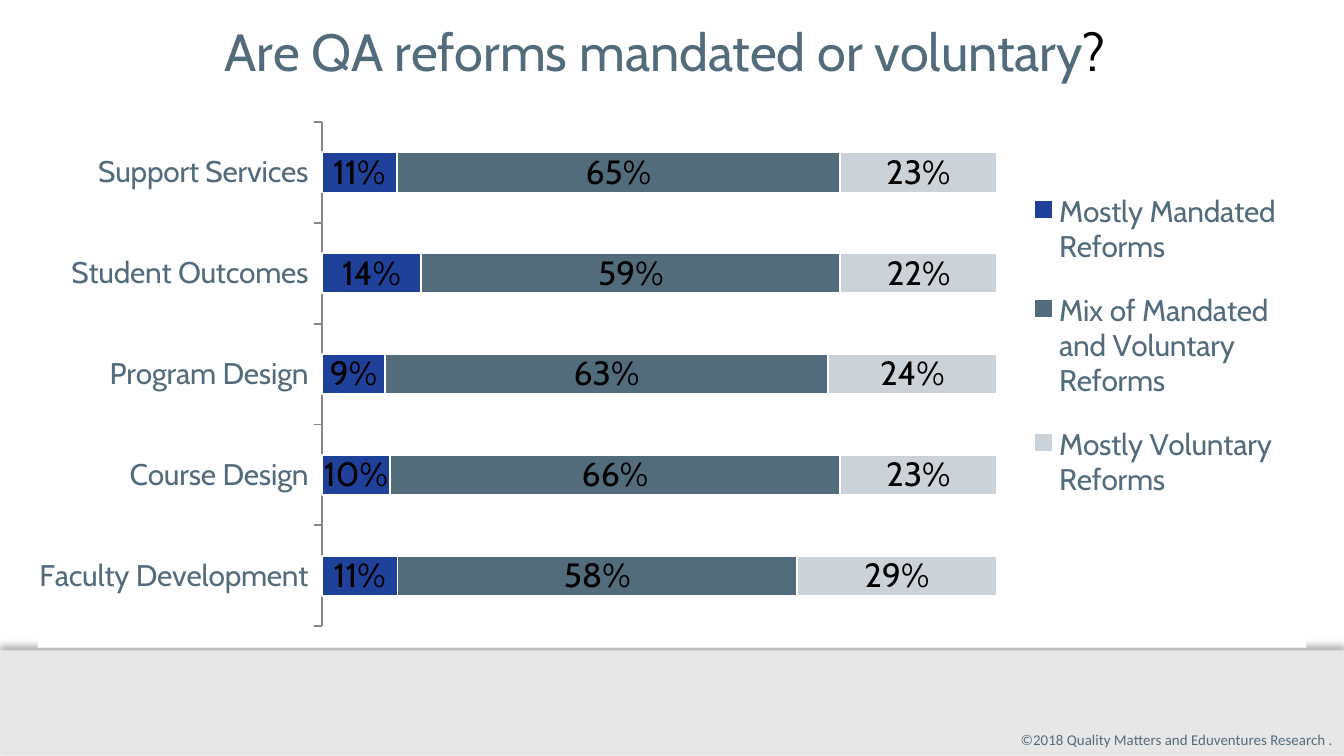
from lxml.etree import fromstring
from pptx import Presentation
from pptx.chart.data import CategoryChartData
from pptx.dml.color import RGBColor
from pptx.enum.chart import XL_CHART_TYPE, XL_LEGEND_POSITION, XL_TICK_LABEL_POSITION, XL_TICK_MARK
from pptx.enum.shapes import MSO_SHAPE
from pptx.enum.text import MSO_ANCHOR, PP_ALIGN
from pptx.oxml.ns import nsdecls, qn
from pptx.util import Inches, Pt

COLORS = {
    "slate": "526C7C",
    "blue": "1F419A",
    "mist": "CBD3D8",
    "band": "E7E7E7",
    "axis": "868686",
    "black": "000000",
    "white": "FFFFFF",
}
CATEGORIES = ["Faculty Development", "Course Design", "Program Design",
              "Student Outcomes", "Support Services"]
SERIES = [
    ("Mostly Mandated Reforms", "blue", [0.11, 0.10, 0.09, 0.14, 0.11]),
    ("Mix of Mandated and Voluntary Reforms", "slate", [0.58, 0.66, 0.63, 0.59, 0.65]),
    ("Mostly Voluntary Reforms", "mist", [0.29, 0.23, 0.24, 0.22, 0.23]),
]


def color(name):
    return RGBColor.from_string(COLORS[name])


def style_font(font, size, color_name, name="Cabin"):
    font.name = name
    font.size = Pt(size)
    font.color.rgb = color(color_name)
    font.bold = False


def add_run(paragraph, text, size, color_name, name="Cabin"):
    run = paragraph.add_run()
    run.text = text
    style_font(run.font, size, color_name, name)


def manual_layout(left, top, width, height, target=""):
    return fromstring(
        f'<c:layout {nsdecls("c")}><c:manualLayout>{target}'
        '<c:xMode val="edge"/><c:yMode val="edge"/>'
        f'<c:x val="{left}"/><c:y val="{top}"/><c:w val="{width}"/><c:h val="{height}"/>'
        '</c:manualLayout></c:layout>')


def add_footer(slide, left, top, width, height):
    band = slide.shapes.add_shape(MSO_SHAPE.RECTANGLE, Inches(left), Inches(top),
                                  Inches(width), Inches(height))
    band.fill.solid()
    band.fill.fore_color.rgb = color("band")
    band.line.fill.background()
    band.shadow.inherit = False
    effects = band._element.spPr.find(qn("a:effectLst"))
    effects.append(fromstring(
        f'<a:outerShdw {nsdecls("a")} blurRad="{Pt(4)}" dist="{Pt(3)}" dir="16200000" '
        f'rotWithShape="0"><a:srgbClr val="{COLORS["black"]}"><a:alpha val="30000"/>'
        '</a:srgbClr></a:outerShdw>'))

    box = slide.shapes.add_textbox(Inches(left + 6.75), Inches(top + 0.55),
                                   Inches(3.17), Inches(0.24))
    frame = box.text_frame
    frame.word_wrap = True
    frame.margin_right = 0
    paragraph = frame.paragraphs[0]
    paragraph.alignment = PP_ALIGN.RIGHT
    add_run(paragraph, "©2018 Quality Matters and Eduventures Research .", 8, "slate", "Calibri")


def add_title(slide, left, top, width, height):
    title = slide.shapes.title
    title.left, title.top = Inches(left), Inches(top)
    title.width, title.height = Inches(width), Inches(height)
    frame = title.text_frame
    frame.word_wrap = True
    frame.vertical_anchor = MSO_ANCHOR.TOP
    paragraph = frame.paragraphs[0]
    paragraph.alignment = PP_ALIGN.CENTER
    add_run(paragraph, "Are QA reforms mandated or voluntary", 28, "slate")
    add_run(paragraph, "?", 28, "black")


def add_reform_chart(slide, left, top, width, height):
    data = CategoryChartData(number_format="0%")
    data.categories = CATEGORIES
    for name, _, values in SERIES:
        data.add_series(name, values)
    chart = slide.shapes.add_chart(XL_CHART_TYPE.BAR_STACKED_100, Inches(left), Inches(top),
                                   Inches(width), Inches(height), data).chart
    chart.has_title = False
    style_font(chart.font, 18, "black")

    category_axis = chart.category_axis
    category_axis.major_tick_mark = XL_TICK_MARK.OUTSIDE
    category_axis.tick_label_position = XL_TICK_LABEL_POSITION.LOW
    category_axis.format.line.color.rgb = color("axis")
    category_axis.format.line.width = Pt(1)
    style_font(category_axis.tick_labels.font, 16, "slate")
    value_axis = chart.value_axis
    value_axis.visible = False
    value_axis.has_major_gridlines = False
    value_axis.minimum_scale, value_axis.maximum_scale = 0, 1

    plot = chart.plots[0]
    plot.gap_width, plot.overlap = 150, 100
    plot.vary_by_categories = False
    for series, (_, fill_name, _) in zip(plot.series, SERIES):
        series.format.fill.solid()
        series.format.fill.fore_color.rgb = color(fill_name)
        series.format.line.color.rgb = color("white")
        series.format.line.width = Pt(1)
        labels = series.data_labels
        labels.show_value = True
        labels.number_format = "0%"
        labels.number_format_is_linked = False
        style_font(labels.font, 18, "black")

    chart.has_legend = True
    legend = chart.legend
    legend.position = XL_LEGEND_POSITION.RIGHT
    legend.include_in_layout = False
    style_font(legend.font, 16, "slate")
    legend._element.find(qn("c:legendPos")).addnext(manual_layout(0.776, 0.12, 0.21, 0.66))

    plot_area = chart._chartSpace.chart.plotArea
    for layout in plot_area.findall(qn("c:layout")):
        plot_area.remove(layout)
    plot_area.insert(0, manual_layout(0.224, 0.041, 0.532, 0.92,
                                      '<c:layoutTarget val="inner"/>'))
    chart._chartSpace.chart.addnext(fromstring(
        f'<c:spPr {nsdecls("c", "a")}><a:solidFill><a:srgbClr val="{COLORS["white"]}"/>'
        '</a:solidFill><a:ln><a:noFill/></a:ln></c:spPr>'))


def main():
    presentation = Presentation()
    presentation.slide_width = Inches(10)
    presentation.slide_height = presentation.slide_width * 9 // 16
    slide = presentation.slides.add_slide(presentation.slide_layouts[5])
    add_footer(slide, 0, 4.84, 10, 0.78)
    add_reform_chart(slide, 0.28, 0.74, 9.44, 4.08)
    add_title(slide, 0.28, 0.09, 9.34, 0.57)
    presentation.save("out.pptx")


if __name__ == "__main__":
    main()
